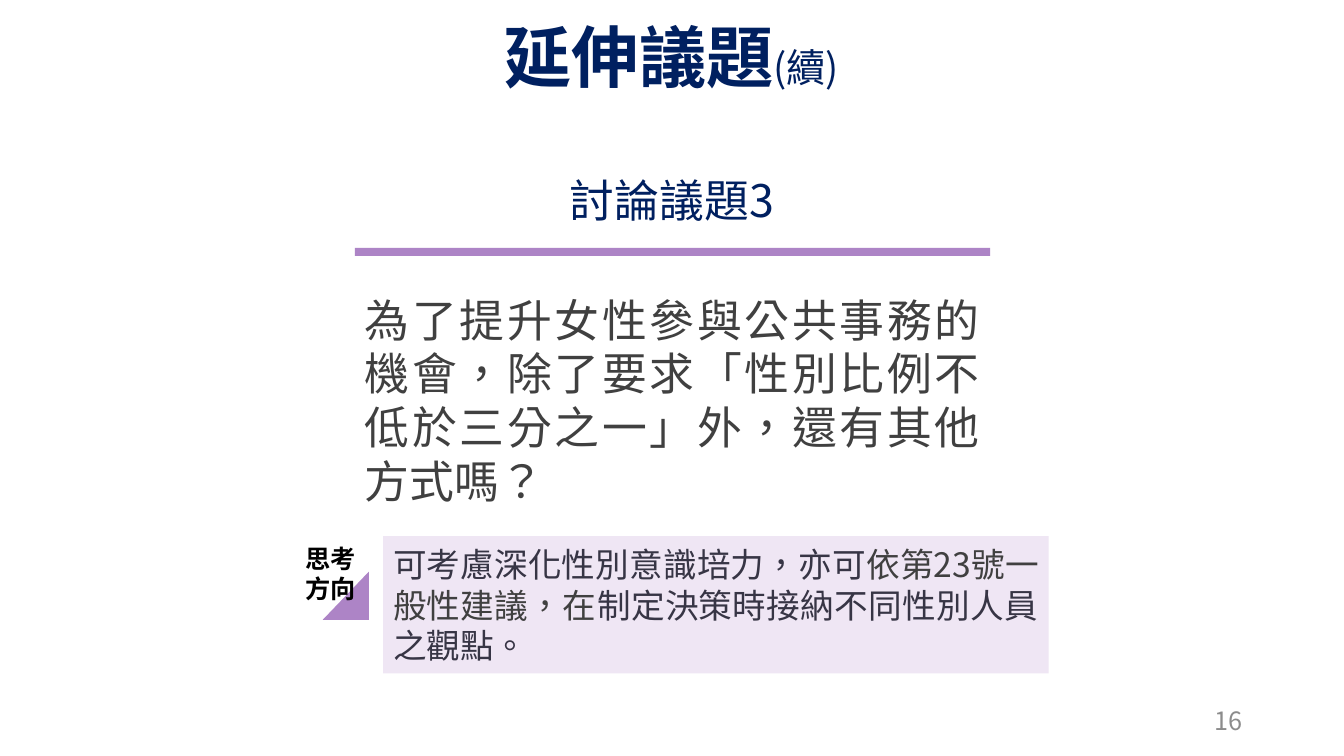
from dataclasses import dataclass

from lxml.etree import SubElement
from pptx import Presentation
from pptx.dml.color import RGBColor
from pptx.enum.lang import MSO_LANGUAGE_ID
from pptx.enum.shapes import MSO_SHAPE
from pptx.enum.text import MSO_ANCHOR, MSO_AUTO_SIZE, PP_ALIGN
from pptx.oxml.ns import qn
from pptx.util import Emu, Pt

PX = 9144


@dataclass(frozen=True)
class Theme:
    font: str = "Noto Sans CJK SC"
    navy: str = "002060"
    purple: str = "AD84C6"
    pale: str = "EFE6F4"
    ink: str = "373545"
    body: str = "404040"
    black: str = "000000"
    grey: str = "8C8C8C"
    title_size: int = 48
    heading_size: int = 32
    suffix_size: int = 28
    answer_size: int = 24
    small_size: int = 18


class SlideBuilder:
    def __init__(self, prs, theme):
        self.theme = theme
        self.s = prs.slides.add_slide(prs.slide_layouts[5])

    def box(self, at):
        return [Emu(v * PX) for v in at]

    def set_runs(self, sp, runs, align, anchor=MSO_ANCHOR.TOP, spacing=1.0):
        tf = sp.text_frame
        tf.word_wrap = True
        tf.auto_size = MSO_AUTO_SIZE.NONE
        tf.vertical_anchor = anchor
        p = tf.paragraphs[0]
        p.alignment = align
        p.line_spacing = spacing
        p.space_before = Pt(0)
        for text, size, color, bold in runs:
            r = p.add_run()
            r.text = text
            r.font.size = Pt(size)
            r.font.bold = bold
            r.font.color.rgb = RGBColor.from_string(color)
            r.font.name = self.theme.font
            r.font.language_id = MSO_LANGUAGE_ID.TRADITIONAL_CHINESE
            ea = SubElement(r.font._element, qn("a:ea"))
            ea.set("typeface", self.theme.font)

    def title(self, at, runs):
        sp = self.s.shapes.title
        sp.left, sp.top, sp.width, sp.height = self.box(at)
        self.set_runs(sp, runs, PP_ALIGN.CENTER, MSO_ANCHOR.MIDDLE, 0.9)

    def text(self, at, runs, align, anchor=MSO_ANCHOR.TOP, spacing=1.0, parent=None):
        shapes = parent.shapes if parent else self.s.shapes
        sp = shapes.add_textbox(*self.box(at))
        self.set_runs(sp, runs, align, anchor, spacing)

    def shape(self, at, color, kind=MSO_SHAPE.RECTANGLE, parent=None):
        shapes = parent.shapes if parent else self.s.shapes
        sp = shapes.add_shape(kind, *self.box(at))
        sp.shadow.inherit = False
        sp.fill.solid()
        sp.fill.fore_color.rgb = RGBColor.from_string(color)
        sp.line.fill.background()
        return sp

    def hint(self, label, runs):
        t = self.theme
        group = self.s.shapes.add_group_shape()
        panel = self.shape((380, 532, 660, 136), t.pale, parent=group)
        self.set_runs(panel, runs, PP_ALIGN.JUSTIFY, MSO_ANCHOR.MIDDLE)
        corner = self.shape((320, 567, 46, 48), t.purple, MSO_SHAPE.ISOSCELES_TRIANGLE, group)
        corner.adjustments[0] = 1
        self.text((293, 534, 74, 77), [(label, t.small_size, t.black, True)],
                  PP_ALIGN.LEFT, parent=group)


def main():
    prs = Presentation()
    prs.slide_width, prs.slide_height = Emu(1333 * PX), Emu(750 * PX)
    t = Theme()
    b = SlideBuilder(prs, t)
    b.title((0, 18, 1333, 84), [
        ("延伸議題", t.title_size, t.navy, True),
        ("(續)", t.suffix_size, t.navy, False),
    ])
    b.text((532, 172, 269, 42), [("討論議題3", t.heading_size, t.navy, False)],
           PP_ALIGN.CENTER, spacing=0.9)
    b.shape((352, 246, 630, 8), t.purple)
    question = "為了提升女性參與公共事務的機會，除了要求「性別比例不低於三分之一」外，還有其他方式嗎？"
    b.text((352, 285, 630, 226), [(question, t.heading_size, t.body, False)], PP_ALIGN.JUSTIFY)
    b.hint("思考方向", [
        ("可考慮深化性別意識培力，亦可", t.answer_size, t.ink, False),
        ("依第23號一般性建議，在", t.answer_size, t.body, False),
        ("制定決策時接納不同性別人員之觀點。", t.answer_size, t.ink, False),
    ])
    b.text((942, 695, 300, 40), [("16", t.small_size, t.grey, False)],
           PP_ALIGN.RIGHT, MSO_ANCHOR.MIDDLE)
    prs.save("out.pptx")


if __name__ == "__main__":
    main()
